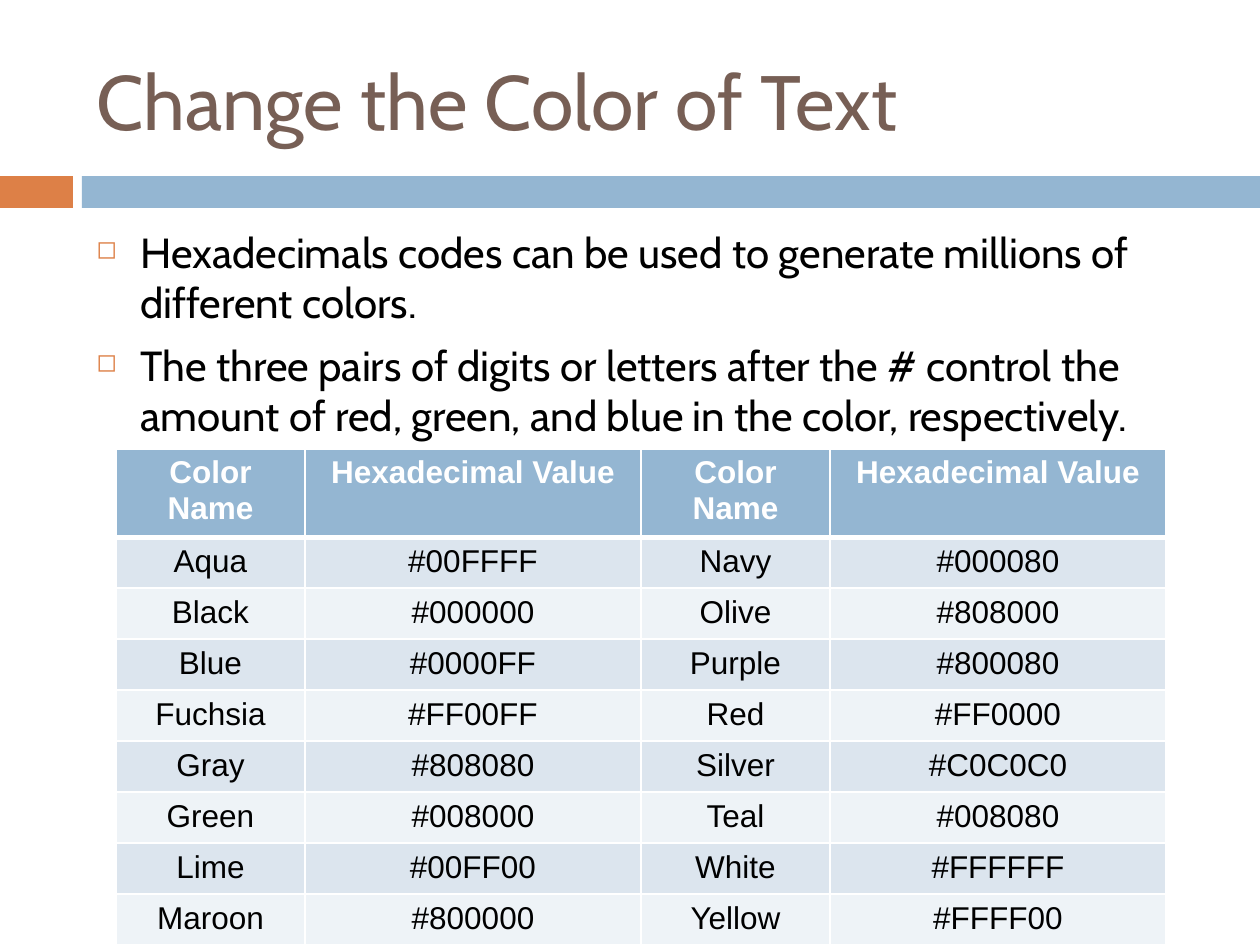
from dataclasses import dataclass

import lxml.etree
import pptx
import pptx.dml.color
import pptx.enum.shapes
import pptx.enum.text
import pptx.oxml.ns
import pptx.util

PX_PER_INCH = 126


@dataclass(frozen=True)
class Theme:
    heading_font: str = "Cabin"
    table_font: str = "Arial"
    title_size: int = 44
    body_size: int = 24
    table_size: int = 18
    bullet_percent: int = 60
    title: str = "775F55"
    accent: str = "DD8047"
    band: str = "94B6D2"
    row_dark: str = "DCE5EE"
    row_light: str = "EEF3F7"
    ink: str = "000000"
    white: str = "FFFFFF"


@dataclass(frozen=True)
class Box:
    left: int
    top: int
    width: int
    height: int

    def emu(self) -> tuple:
        return tuple(px(n) for n in (self.left, self.top, self.width, self.height))


@dataclass(frozen=True)
class Bar:
    box: Box
    color: str


THEME = Theme()
BARS = (
    Bar(Box(0, 176, 73, 32), THEME.accent),
    Bar(Box(82, 176, 1178, 32), THEME.band),
)
TITLE_BOX = Box(84, 31, 1124, 137)
BODY_BOX = Box(84, 220, 1124, 620)
BULLET_INDENT = 44
BULLETS = (
    "Hexadecimals codes can be used to generate millions of different colors.",
    "The three pairs of digits or letters after the # control the amount of red, "
    "green, and blue in the color, respectively.",
)
COLUMN_WIDTHS = (189, 336, 189, 336)
ROW_HEIGHT = 51
TABLE_ROWS = (
    ("Color Name", "Hexadecimal Value") * 2,
    ("Aqua", "#00FFFF", "Navy", "#000080"),
    ("Black", "#000000", "Olive", "#808000"),
    ("Blue", "#0000FF", "Purple", "#800080"),
    ("Fuchsia", "#FF00FF", "Red", "#FF0000"),
    ("Gray", "#808080", "Silver", "#C0C0C0"),
    ("Green", "#008000", "Teal", "#008080"),
    ("Lime", "#00FF00", "White", "#FFFFFF"),
    ("Maroon", "#800000", "Yellow", "#FFFF00"),
)
TABLE_BOX = Box(116, 449, sum(COLUMN_WIDTHS), ROW_HEIGHT * len(TABLE_ROWS))


def px(length: int) -> int:
    return round(length * 914400 / PX_PER_INCH)


def rgb(color: str) -> pptx.dml.color.RGBColor:
    return pptx.dml.color.RGBColor.from_string(color)


def add_xml(parent, tag: str, **attributes: str):
    return lxml.etree.SubElement(parent, pptx.oxml.ns.qn(tag), **attributes)


def set_font(paragraph, name: str, size: int, color: str, bold: bool = False) -> None:
    font = paragraph.font
    font.name, font.size, font.bold = name, pptx.util.Pt(size), bold
    font.color.rgb = rgb(color)


def draw_bar(slide, bar: Bar) -> None:
    shape = slide.shapes.add_shape(
        pptx.enum.shapes.MSO_SHAPE.RECTANGLE, *bar.box.emu())
    shape.shadow.inherit = False
    shape.fill.solid()
    shape.fill.fore_color.rgb = rgb(bar.color)
    shape.line.fill.background()


def add_text_frame(slide, box: Box):
    frame = slide.shapes.add_textbox(*box.emu()).text_frame
    frame.word_wrap = True
    return frame


def draw_title(slide) -> None:
    frame = add_text_frame(slide, TITLE_BOX)
    frame.vertical_anchor = pptx.enum.text.MSO_ANCHOR.MIDDLE
    frame.text = "Change the Color of Text"
    set_font(frame.paragraphs[0], THEME.heading_font, THEME.title_size, THEME.title)


def add_bullet(paragraph) -> None:
    properties = paragraph._p.get_or_add_pPr()
    properties.set("marL", str(px(BULLET_INDENT)))
    properties.set("indent", str(-px(BULLET_INDENT)))
    bullet_color = lxml.etree.Element(pptx.oxml.ns.qn("a:buClr"))
    add_xml(bullet_color, "a:srgbClr", val=THEME.accent)
    bullet_size = lxml.etree.Element(
        pptx.oxml.ns.qn("a:buSzPct"), val=str(THEME.bullet_percent * 1000))
    bullet = lxml.etree.Element(pptx.oxml.ns.qn("a:buChar"), char="◻")
    # Bullet properties belong just before the default run properties
    position = properties.index(properties.find(pptx.oxml.ns.qn("a:defRPr")))
    properties[position:position] = [bullet_color, bullet_size, bullet]


def draw_bullets(slide) -> None:
    frame = add_text_frame(slide, BODY_BOX)
    frame.text = "\n".join(BULLETS)
    for paragraph in frame.paragraphs:
        paragraph.space_before = pptx.util.Pt(7)
        set_font(paragraph, THEME.heading_font, THEME.body_size, THEME.ink)
        add_bullet(paragraph)


def set_borders(cell, row_index: int) -> None:
    properties = cell._tc.get_or_add_tcPr()
    thick_side = {0: "B", 1: "T"}.get(row_index)
    for side in "LRTB":
        points = 3 if side == thick_side else 1
        line = add_xml(properties, f"a:ln{side}", w=str(pptx.util.Pt(points)))
        add_xml(add_xml(line, "a:solidFill"), "a:srgbClr", val=THEME.white)


def style_cell(cell, text: str, row_index: int) -> None:
    header = row_index == 0
    set_borders(cell, row_index)
    cell.fill.solid()
    stripe = THEME.row_dark if row_index % 2 else THEME.row_light
    cell.fill.fore_color.rgb = rgb(THEME.band if header else stripe)
    cell.text = text
    paragraph = cell.text_frame.paragraphs[0]
    paragraph.alignment = pptx.enum.text.PP_ALIGN.CENTER
    set_font(paragraph, THEME.table_font, THEME.table_size,
             THEME.white if header else THEME.ink, header)


def draw_table(slide) -> None:
    table = slide.shapes.add_table(
        len(TABLE_ROWS), len(COLUMN_WIDTHS), *TABLE_BOX.emu()).table
    table.horz_banding = False
    for column, width in zip(table.columns, COLUMN_WIDTHS):
        column.width = px(width)
    for row_index, texts in enumerate(TABLE_ROWS):
        table.rows[row_index].height = px(ROW_HEIGHT)
        for cell, text in zip(table.rows[row_index].cells, texts):
            style_cell(cell, text, row_index)


def main() -> None:
    presentation = pptx.Presentation()
    presentation.slide_width, presentation.slide_height = px(1260), px(945)
    slide = presentation.slides.add_slide(presentation.slide_layouts[6])

    # Divider under the title
    for bar in BARS:
        draw_bar(slide, bar)

    # Text and color table
    draw_title(slide)
    draw_bullets(slide)
    draw_table(slide)
    presentation.save("out.pptx")


if __name__ == "__main__":
    main()
